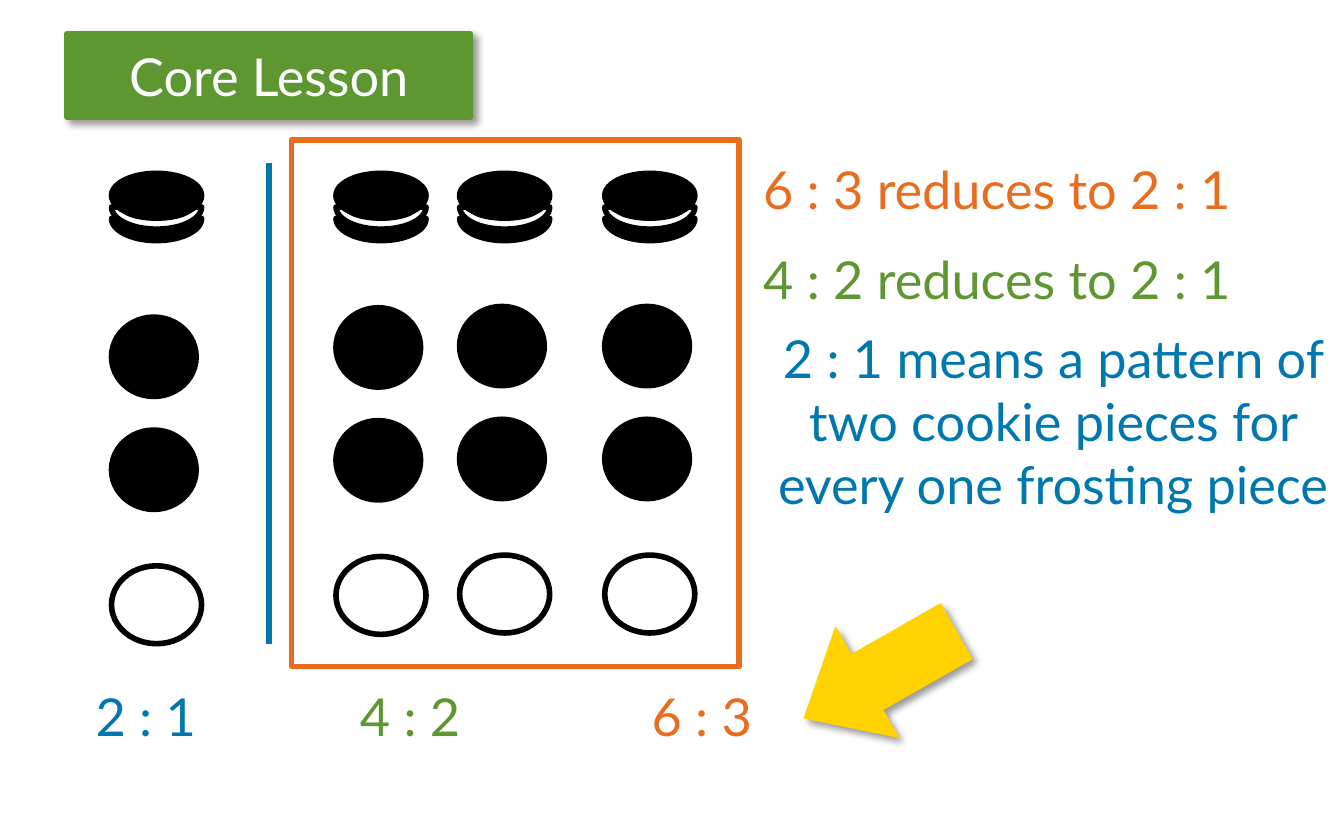
from dataclasses import dataclass

from lxml.etree import SubElement
from pptx import Presentation
from pptx.dml.color import RGBColor
from pptx.enum.shapes import MSO_CONNECTOR, MSO_SHAPE
from pptx.enum.text import MSO_ANCHOR, PP_ALIGN
from pptx.oxml.ns import qn
from pptx.util import Inches, Pt


@dataclass(frozen=True)
class Theme:
    font: str = "Lato"
    size: float = 28
    line: float = 3
    black: str = "000000"
    white: str = "FFFFFF"
    green: str = "5E9732"
    blue: str = "0078AE"
    orange: str = "E86D1F"
    yellow: str = "FFD200"


class Board:
    def __init__(self, slide, theme):
        self.slide = slide
        self.theme = theme

    def label(self, frame, text, color, align):
        para = frame.paragraphs[0]
        para.text = text
        para.alignment = align
        para.font.name = self.theme.font
        para.font.size = Pt(self.theme.size)
        para.font.color.rgb = RGBColor.from_string(color)

    def text(self, box, text, color, align=PP_ALIGN.LEFT):
        item = self.slide.shapes.add_textbox(*map(Inches, box))
        item.text_frame.word_wrap = True
        self.label(item.text_frame, text, color, align)

    def shape(self, kind, box, fill, line, turn=0, width=None):
        """Add a preset shape; a fill of None leaves it hollow."""
        item = self.slide.shapes.add_shape(kind, *map(Inches, box))
        item.shadow.inherit = False
        item.rotation = turn
        if fill:
            item.fill.solid()
            item.fill.fore_color.rgb = RGBColor.from_string(fill)
        else:
            item.fill.background()
        item.line.color.rgb = RGBColor.from_string(line)
        item.line.width = Pt(width or self.theme.line)
        return item

    def shade(self, item):
        """Cast a soft shadow to the lower right."""
        effects = item._element.spPr.find(qn("a:effectLst"))
        outer = SubElement(effects, qn("a:outerShdw"), blurRad=str(Pt(4)),
                           dist=str(Pt(3)), dir="2700000", rotWithShape="0")
        color = SubElement(outer, qn("a:srgbClr"), val=self.theme.black)
        SubElement(color, qn("a:alpha"), val="40000")

    def rule(self, x, top, end, color):
        item = self.slide.shapes.add_connector(
            MSO_CONNECTOR.STRAIGHT, *map(Inches, (x, top, x, end)))
        item.line.color.rgb = RGBColor.from_string(color)
        item.line.width = Pt(self.theme.line)
        SubElement(item._element.spPr, qn("a:effectLst"))

    def title(self, box, text):
        look = self.theme
        item = self.shape(MSO_SHAPE.RECTANGLE, box, look.green, look.green)
        self.shade(item)
        item.text_frame.vertical_anchor = MSO_ANCHOR.MIDDLE
        self.label(item.text_frame, text, look.white, PP_ALIGN.CENTER)

    def cookie(self, x, top):
        """Stack the lower wafer, the frosting and the upper wafer."""
        look = self.theme
        layers = [(MSO_SHAPE.BLOCK_ARC, look.black, 180),
                  (MSO_SHAPE.BLOCK_ARC, look.white, 180),
                  (MSO_SHAPE.OVAL, look.black, 0)]
        for step, (kind, fill, turn) in enumerate(layers):
            y = top + 0.17 * (1 - step / 2)
            self.shape(kind, (x, y, 0.67, 0.33), fill, look.black, turn)

    def pieces(self, x, top):
        """Lay out two wafers above one ring of frosting."""
        look = self.theme
        for y in (top, top + 0.84):
            self.shape(MSO_SHAPE.OVAL, (x, y, 0.63, 0.59), look.black, look.black)
        self.shape(MSO_SHAPE.OVAL, (x, top + 1.85, 0.67, 0.58), None, look.black)

    def arrow(self, box, turn):
        look = self.theme
        item = self.shape(MSO_SHAPE.UP_ARROW, box, look.yellow, look.yellow,
                          turn, 0.75)
        item.adjustments[0] = 0.5
        item.adjustments[1] = 0.57
        self.shade(item)


def main():
    deck = Presentation()
    deck.slide_width, deck.slide_height = Inches(10), Inches(6.25)
    look = Theme()
    board = Board(deck.slides.add_slide(deck.slide_layouts[6]), look)

    board.title((0.5, 0.25, 3, 0.62), "Core Lesson")
    for x, top in [(0.83, 2.36), (2.5, 2.29), (3.42, 2.28), (4.5, 2.28)]:
        board.cookie(x, 1.29)
        board.pieces(x, top)
    board.rule(2, 1.21, 4.79, look.blue)
    board.shape(MSO_SHAPE.RECTANGLE, (2.17, 1.04, 3.33, 3.92), None, look.orange)
    board.arrow((6.08, 4.37, 0.94, 1.3), 240.3)

    board.text((0.25, 5.04, 1.67, 0.75), "2 : 1", look.blue, PP_ALIGN.CENTER)
    board.text((2.58, 5.04, 1.17, 0.88), "4 : 2", look.green)
    board.text((4.75, 5.04, 1.12, 0.75), "6 : 3", look.orange)
    board.text((5.58, 1.12, 4.5, 0.83), "6 : 3 reduces to 2 : 1", look.orange)
    board.text((5.58, 1.79, 4.42, 0.92), "4 : 2 reduces to 2 : 1", look.green)
    board.text((5.5, 2.38, 4.67, 0.75),
               "2 : 1 means a pattern of two cookie pieces "
               "for every one frosting piece", look.blue, PP_ALIGN.CENTER)
    deck.save("out.pptx")


if __name__ == "__main__":
    main()
